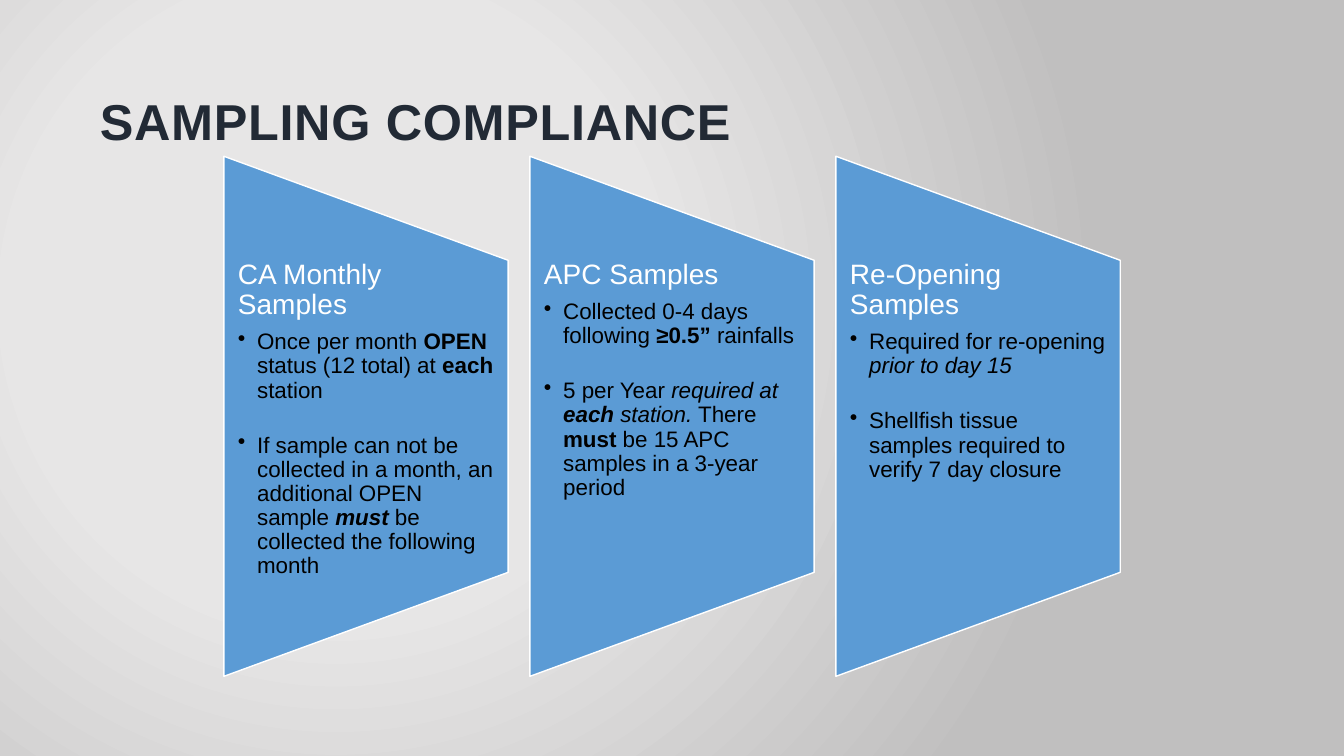
from dataclasses import dataclass

from pptx import Presentation
from pptx.dml.color import RGBColor
from pptx.enum.shapes import MSO_SHAPE
from pptx.enum.text import MSO_ANCHOR, PP_ALIGN
from pptx.oxml import parse_xml
from pptx.oxml.ns import nsdecls, qn
from pptx.util import Inches, Pt

# Content: each bullet is a list of (text, style), with b for bold and i for italic
TITLE = "SAMPLING COMPLIANCE"
SAMPLE_TYPES = [
    ("CA Monthly Samples", [
        [("Once per month ", ""), ("OPEN", "b"), (" status (12 total) at ", ""),
         ("each", "b"), (" station", "")],
        [("If sample can not be collected in a month, an additional OPEN sample ", ""),
         ("must", "bi"), (" be collected the following month", "")],
    ]),
    ("APC Samples", [
        [("Collected 0-4 days following", ""), (" ≥0.5”", "b"), (" rainfalls", "")],
        [("5 per Year ", ""), ("required at ", "i"), ("each", "bi"), (" station.", "i"),
         (" There ", ""), ("must", "b"),
         (" be 15 APC samples in a 3-year period", "")],
    ]),
    ("Re-Opening Samples", [
        [("Required for re-opening ", ""), ("prior to day 15", "i")],
        [("Shellfish tissue samples required to verify 7 day closure", "")],
    ]),
]


@dataclass(frozen=True)
class Theme:
    font: str = "Arial"
    title: str = "222A35"
    panel: str = "5B9BD5"
    heading: str = "FFFFFF"
    body: str = "000000"
    backdrop: tuple = ((0, "E8E7E7"), (41, "E7E6E6"), (100, "C0BFBF"))
    title_size: int = 36
    heading_size: int = 20
    body_size: int = 16


THEME = Theme()

# Layout, in inches
SLIDE_W, SLIDE_H = 13.33, 7.5
PANEL_LEFT, PANEL_TOP = 2.22, 1.55
PANEL_W, PANEL_H = 2.82, 5.16
PANEL_PITCH = 3.035
TEXT_H = PANEL_H * 0.6
TEXT_TOP = PANEL_TOP + PANEL_H * 0.2
INSET, INDENT = 0.14, 0.19


def style_font(font, size, color, bold=None):
    font.name, font.size, font.bold = THEME.font, Pt(size), bold
    font.color.rgb = RGBColor.from_string(color)


def paint_background(slide):
    slide.background.fill.gradient()
    linear = slide.element.find(".//" + qn("a:gradFill"))
    stops = "".join(f'<a:gs pos="{pos * 1000}"><a:srgbClr val="{color}"/></a:gs>'
                    for pos, color in THEME.backdrop)
    radial = parse_xml(
        f'<a:gradFill {nsdecls("a")} rotWithShape="1"><a:gsLst>{stops}</a:gsLst>'
        '<a:path path="circle"><a:fillToRect l="50000" t="80000" r="100000" b="100000"/>'
        '</a:path></a:gradFill>')
    linear.getparent().replace(linear, radial)


def add_title(slide):
    title = slide.shapes.title
    title.left, title.top = Inches(0.89), Inches(0.3)
    title.width, title.height = Inches(11.56), Inches(1.25)
    frame = title.text_frame
    frame.text = TITLE
    frame.vertical_anchor = MSO_ANCHOR.BOTTOM
    line = frame.paragraphs[0]
    line.alignment = PP_ALIGN.LEFT
    line.line_spacing = 0.9
    style_font(line.font, THEME.title_size, THEME.title, True)
    line.runs[0].font._element.set("spc", "50")


def add_panel(group, left):
    # Drawn lying down, then turned about its centre so the wide edge is on the left
    shift = (PANEL_H - PANEL_W) / 2
    panel = group.shapes.add_shape(
        MSO_SHAPE.FLOWCHART_MANUAL_OPERATION, Inches(left - shift),
        Inches(PANEL_TOP + shift), Inches(PANEL_H), Inches(PANEL_W))
    panel.rotation = 270
    panel.shadow.inherit = False
    panel.fill.solid()
    panel.fill.fore_color.rgb = RGBColor.from_string(THEME.panel)
    panel.line.color.rgb = RGBColor.from_string(THEME.heading)
    panel.line.width = Pt(1)


def add_bullet(frame, pieces, space_after):
    bullet = frame.add_paragraph()
    props = bullet._p.get_or_add_pPr()
    props.set("marL", str(Inches(INDENT)))
    props.set("indent", str(-Inches(INDENT)))
    props.append(parse_xml(f'<a:buChar {nsdecls("a")} char="•"/>'))
    bullet.line_spacing = 0.9
    bullet.space_after = Pt(space_after)
    style_font(bullet.font, THEME.body_size, THEME.body)
    for text, style in pieces:
        run = bullet.add_run()
        run.text = text
        if "b" in style:
            run.font.bold = True
        if "i" in style:
            run.font.italic = True


def add_panel_text(group, left, heading, bullets):
    frame = group.shapes.add_textbox(Inches(left), Inches(TEXT_TOP),
                                     Inches(PANEL_W), Inches(TEXT_H)).text_frame
    frame.word_wrap = True
    frame.margin_left = frame.margin_right = Inches(INSET)
    frame.margin_top = frame.margin_bottom = 0
    head = frame.paragraphs[0]
    head.text = heading
    head.line_spacing = 0.9
    head.space_after = Pt(7)
    style_font(head.font, THEME.heading_size, THEME.heading)
    for pieces in bullets:
        add_bullet(frame, pieces, 0 if pieces is bullets[-1] else 22)


def main():
    deck = Presentation()
    deck.slide_width, deck.slide_height = Inches(SLIDE_W), Inches(SLIDE_H)
    slide = deck.slides.add_slide(deck.slide_layouts[5])
    paint_background(slide)
    add_title(slide)
    # One panel per sample type, evenly spaced
    group = slide.shapes.add_group_shape()
    for column, (heading, bullets) in enumerate(SAMPLE_TYPES):
        left = PANEL_LEFT + column * PANEL_PITCH
        add_panel(group, left)
        add_panel_text(group, left, heading, bullets)
    deck.save("out.pptx")


if __name__ == "__main__":
    main()
